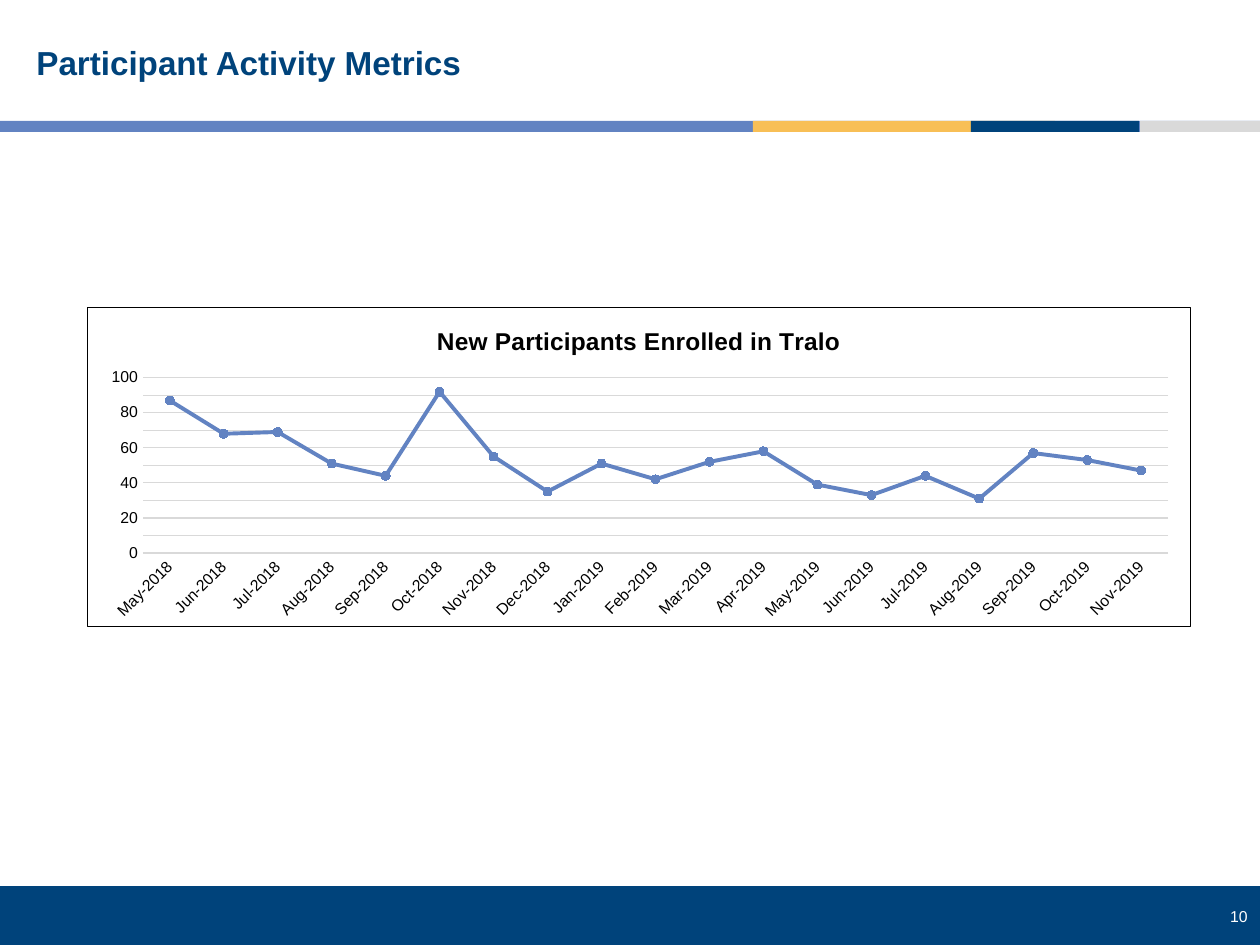
from dataclasses import dataclass
from typing import Any

from lxml.etree import SubElement
from pptx import Presentation
from pptx.chart.data import CategoryChartData
from pptx.dml.color import RGBColor
from pptx.enum.chart import XL_CHART_TYPE as ChartType, XL_MARKER_STYLE as Marker, XL_TICK_MARK as Tick
from pptx.enum.shapes import MSO_SHAPE as Shape
from pptx.enum.text import MSO_ANCHOR as Anchor, PP_ALIGN as Align
from pptx.oxml import parse_xml
from pptx.oxml.ns import nsdecls, qn
from pptx.util import Emu, Pt

NAVY = RGBColor(0x00, 0x43, 0x7B)
BLUE = RGBColor(0x62, 0x83, 0xC2)
GOLD = RGBColor(0xF8, 0xBF, 0x56)
GRAY = RGBColor(0xD9, 0xD9, 0xD9)
BLACK = RGBColor(0, 0, 0)
WHITE = RGBColor(0xFF, 0xFF, 0xFF)

MONTHS = "Jan Feb Mar Apr May Jun Jul Aug Sep Oct Nov Dec".split()
ENROLLED = [87, 68, 69, 51, 44, 92, 55, 35, 51, 42, 52, 58, 39, 33, 44, 31, 57, 53, 47]
FIRST_MONTH = 4
STRIPES = [(0, 1261, BLUE), (753, 302, GOLD), (971, 168, NAVY), (1140, 120, GRAY)]
PLOT_LAYOUT = {"x": 0.05, "y": 0.22, "w": 0.93, "h": 0.55}


def px(length):
    """Turn whole pixels into EMU."""
    return Emu(round(length * 914400 / 126))


def apply(target, values):
    """Set each named value on the target."""
    for name, value in values.items():
        setattr(target, name, value)


@dataclass
class SlideBuilder:
    """Holds the style and the current slide."""

    slide: Any
    font_name: str = "Arial"

    def style_font(self, font, size, color, bold=False):
        """Format a font in the slide's typeface."""
        apply(font, {"name": self.font_name, "size": Pt(size), "bold": bold})
        font.color.rgb = color

    def bar(self, left, top, width, height, color):
        """Add a plain filled rectangle."""
        shape = self.slide.shapes.add_shape(Shape.RECTANGLE, *map(px, (left, top, width, height)))
        shape.shadow.inherit = False
        shape.fill.solid()
        shape.fill.fore_color.rgb = color
        shape.line.fill.background()

    def text(self, box, content, size, color, bold=False, **paragraph_format):
        """Add a one-paragraph text box centred vertically."""
        frame = self.slide.shapes.add_textbox(*map(px, box)).text_frame
        apply(frame, {"word_wrap": True, "vertical_anchor": Anchor.MIDDLE})
        paragraph = frame.paragraphs[0]
        apply(paragraph, {"text": content, **paragraph_format})
        self.style_font(paragraph.runs[0].font, size, color, bold)

    def axis(self, axis):
        """Format the labels and ticks of one axis."""
        apply(axis, {"major_tick_mark": Tick.NONE, "minor_tick_mark": Tick.NONE})
        self.style_font(axis.tick_labels.font, 9, BLACK)

    def grid_line(self, line):
        """Format a thin gray chart line."""
        line.color.rgb = GRAY
        line.width = Pt(0.75)

    def line_chart(self, box, title, categories, values):
        """Add a framed line chart with round markers."""
        data = CategoryChartData()
        data.categories = categories
        data.add_series("Series 1", values)
        chart = self.slide.shapes.add_chart(ChartType.LINE_MARKERS, *map(px, box), data).chart
        apply(chart, {"has_legend": False, "has_title": True})
        self.style_font(chart.font, 10, BLACK)
        chart.chart_title.include_in_layout = False
        chart.chart_title.text_frame.text = title
        self.style_font(chart.chart_title.text_frame.paragraphs[0].runs[0].font, 14, BLACK, True)
        chart.plots[0].vary_by_categories = False

        series = chart.plots[0].series[0]
        series.smooth = False
        series.format.line.color.rgb = BLUE
        series.format.line.width = Pt(2.25)
        apply(series.marker, {"style": Marker.CIRCLE, "size": 5})
        series.marker.format.fill.solid()
        series.marker.format.fill.fore_color.rgb = BLUE
        series.marker.format.line.color.rgb = BLUE

        for axis in (chart.category_axis, chart.value_axis):
            self.axis(axis)
        self.grid_line(chart.category_axis.format.line)
        apply(chart.value_axis, {"minimum_scale": 0, "maximum_scale": 100, "major_unit": 10})
        chart.value_axis.format.line.fill.background()
        self.grid_line(chart.value_axis.major_gridlines.format.line)
        self.finish_chart(chart.element)

    def finish_chart(self, chart_space):
        """Slant the category labels, place the plot and frame the chart."""
        labels = next(chart_space.iter(qn("c:catAx"))).find(qn("c:txPr"))
        labels.find(qn("a:bodyPr")).set("rot", "-2700000")
        plot_area = next(chart_space.iter(qn("c:plotArea")))
        for layout in plot_area.findall(qn("c:layout")):
            plot_area.remove(layout)
        layout = parse_xml(f"<c:layout {nsdecls('c')}><c:manualLayout/></c:layout>")
        settings = {"layoutTarget": "inner", "xMode": "edge", "yMode": "edge", **PLOT_LAYOUT}
        for name, value in settings.items():
            SubElement(layout[0], qn(f"c:{name}")).set("val", str(value))
        plot_area.insert(0, layout)
        chart_space.find(qn("c:chart")).addnext(parse_xml(
            f'<c:spPr {nsdecls("c", "a")}><a:solidFill><a:srgbClr val="{WHITE}"/></a:solidFill>'
            f'<a:ln w="9525"><a:solidFill><a:srgbClr val="{BLACK}"/></a:solidFill></a:ln></c:spPr>'))


def main():
    """Build the participant metrics slide."""
    presentation = Presentation()
    apply(presentation, {"slide_width": px(1260), "slide_height": px(945)})
    builder = SlideBuilder(presentation.slides.add_slide(presentation.slide_layouts[6]))
    builder.bar(0, 886, 1260, 59, NAVY)
    builder.text((1173, 901, 87, 31), "10", 9, WHITE, alignment=Align.RIGHT)
    for left, width, color in STRIPES:
        builder.bar(left, 121, width, 11, color)
    builder.text((24, 21, 1206, 87), "Participant Activity Metrics", 19, NAVY, True, line_spacing=0.9)
    months = range(FIRST_MONTH, FIRST_MONTH + len(ENROLLED))
    categories = [f"{MONTHS[month % 12]}-{2018 + month // 12}" for month in months]
    builder.line_chart((87, 307, 1104, 320), "New Participants Enrolled in Tralo", categories, ENROLLED)
    presentation.save("out.pptx")


if __name__ == "__main__":
    main()
